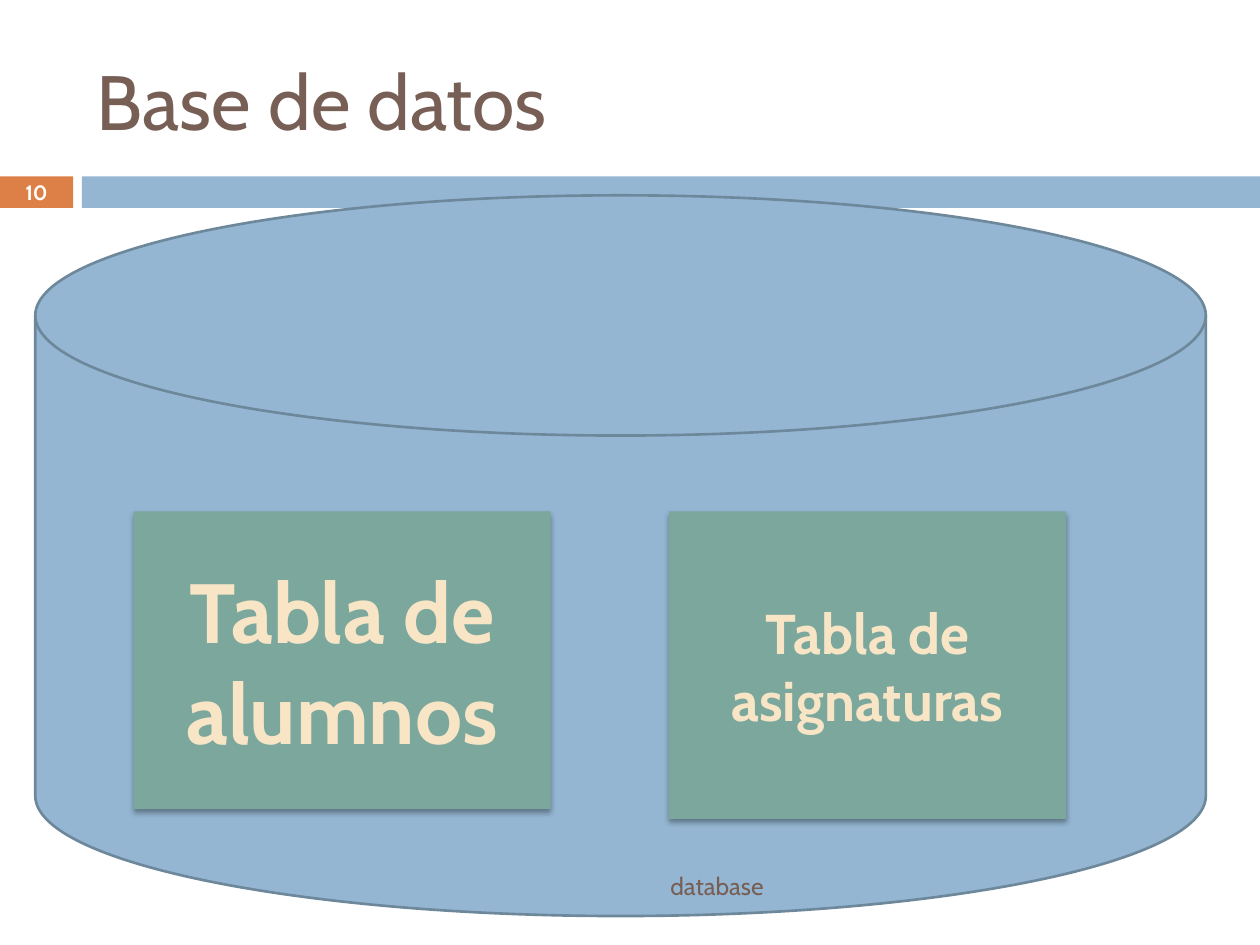
"""Build the slide that shows a database holding two tables."""
from lxml import etree
from pptx import Presentation
from pptx.dml.color import RGBColor
from pptx.enum.shapes import MSO_SHAPE
from pptx.enum.text import MSO_ANCHOR, PP_ALIGN
from pptx.oxml.ns import qn
from pptx.util import Inches, Pt

RECT = MSO_SHAPE.RECTANGLE
DISK = MSO_SHAPE.FLOWCHART_MAGNETIC_DISK
MIDDLE = MSO_ANCHOR.MIDDLE
LEFT, CENTER, RIGHT = PP_ALIGN.LEFT, PP_ALIGN.CENTER, PP_ALIGN.RIGHT
BLUE, BROWN = "94B6D2", "775F55"


def color(target, code):
    target.rgb = RGBColor.from_string(code)


def write(shape, text, size, code, align, bold=False):
    frame = shape.text_frame
    frame.text = text
    frame.word_wrap = True
    frame.vertical_anchor = MIDDLE
    line = frame.paragraphs[0]
    line.alignment = align
    font = line.runs[0].font
    font.name = "Cabin"
    font.size = Pt(size)
    font.bold = bold
    color(font.color, code)


deck = Presentation()
deck.slide_width = Inches(10)
deck.slide_height = Inches(7.5)
shapes = deck.slides.add_slide(deck.slide_layouts[6]).shapes

solids = []
for kind, box, code in [
    (RECT, (0, 1.4, 0.58, 0.25), "DD8047"),
    (RECT, (0.65, 1.4, 9.35, 0.25), BLUE),
    (DISK, (0.28, 1.55, 9.29, 5.72), BLUE),
    (RECT, (1.06, 4.06, 3.31, 2.36), "7BA79D"),
    (RECT, (5.31, 4.06, 3.15, 2.44), "7BA79D"),
]:
    shape = shapes.add_shape(kind, *map(Inches, box))
    shape.shadow.inherit = False
    shape.fill.solid()
    color(shape.fill.fore_color, code)
    shape.line.fill.background()
    solids.append(shape)

badge, band, disk, *tables = solids
color(disk.line.color, "6D879B")
disk.line.width = Pt(1.5)
write(badge, "10", 11.9, "FFFFFF", CENTER, True)

labels = [("Tabla de alumnos", 48), ("Tabla de asignaturas", 32)]
for table, (text, size) in zip(tables, labels):
    write(table, text, size, "F7E5C5", CENTER, True)
    effects = table._element.spPr.find(qn("a:effectLst"))
    shade = etree.SubElement(
        effects, qn("a:outerShdw"), blurRad=str(Pt(3)), dist=str(Pt(2)),
        dir="5400000", rotWithShape="0")
    tone = etree.SubElement(shade, qn("a:srgbClr"), val="000000")
    etree.SubElement(tone, qn("a:alpha"), val="35000")

for box, text, size, align in [
    ((0.67, 0.25, 8.92, 1.08), "Base de datos", 44, LEFT),
    ((0.67, 6.83, 5.49, 0.4), "database", 14, RIGHT),
]:
    write(shapes.add_textbox(*map(Inches, box)), text, size, BROWN, align)

deck.save("out.pptx")
